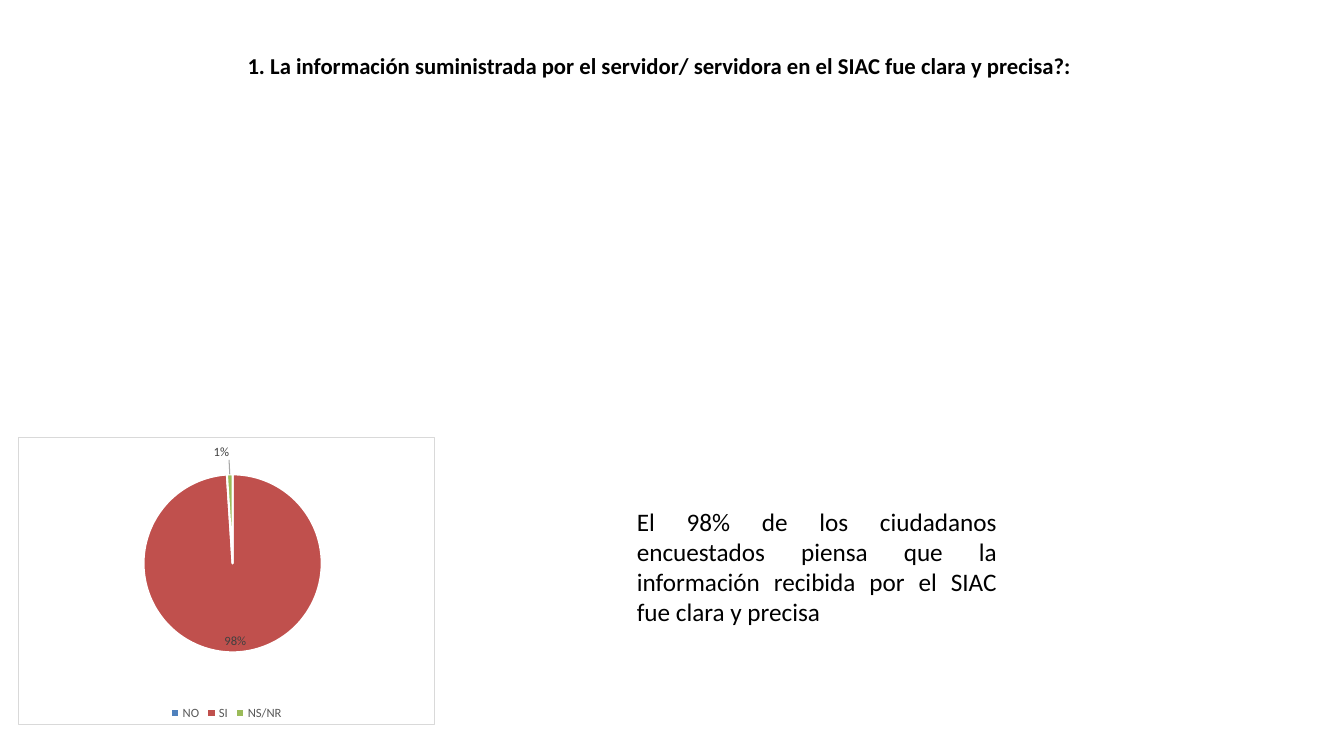
from lxml import etree
from pptx import Presentation
from pptx.chart.data import CategoryChartData
from pptx.dml.color import RGBColor
from pptx.enum import chart as chart_enum, text as text_enum
from pptx.oxml import parse_xml
from pptx.oxml.ns import nsdecls, qn
from pptx.util import Pt

FONT = "Calibri"
COLORS = {
    "text": "000000", "white": "FFFFFF", "border": "D9D9D9",
    "legend": "595959", "label": "404040", "leader": "A6A6A6",
    "NO": "4F81BD", "SI": "C0504D", "NS/NR": "9BBB59",
}
ANSWERS = {"NO": 0, "SI": 98, "NS/NR": 1}
LABEL_OFFSETS = {0: (0.01, -0.03), 2: (-0.02, -0.03)}
PLOT_AREA = {"x": 0.16, "y": 0.13, "w": 0.71, "h": 0.62}


def rgb(name):
    return RGBColor.from_string(COLORS[name])


def format_font(font, size, color, bold=False):
    font.name = FONT
    font.size = Pt(size)
    font.bold = bold
    font.color.rgb = rgb(color)


def add_text(slide, box, content, size, color="text", bold=False,
             align=text_enum.PP_ALIGN.LEFT, anchor=text_enum.MSO_ANCHOR.TOP):
    frame = slide.shapes.add_textbox(*map(Pt, box)).text_frame
    frame.word_wrap = True
    frame.vertical_anchor = anchor
    paragraph = frame.paragraphs[0]
    paragraph.alignment = align
    run = paragraph.add_run()
    run.text = content
    format_font(run.font, size, color, bold)


def manual_layout(positions, inner=False):
    """Return a chart layout element with the given fractions of the chart."""
    target = '<c:layoutTarget val="inner"/>' if inner else ""
    modes = '<c:xMode val="edge"/><c:yMode val="edge"/>' if inner else ""
    values = "".join(f'<c:{key} val="{value}"/>' for key, value in positions.items())
    return parse_xml(f'<c:layout {nsdecls("c")}><c:manualLayout>{target}{modes}{values}'
                     "</c:manualLayout></c:layout>")


def line_properties(color):
    return (f'<c:spPr {nsdecls("c", "a")}><a:ln w="9525"><a:solidFill>'
            f'<a:srgbClr val="{COLORS[color]}"/></a:solidFill></a:ln></c:spPr>')


def label_settings():
    """Return the elements shared by all labels and by each single label."""
    flags = {"LegendKey": 0, "Val": 1, "CatName": 0, "SerName": 0,
             "Percent": 0, "BubbleSize": 0}
    shows = "".join(f'<c:show{name} val="{value}"/>' for name, value in flags.items())
    return (
        '<c:numFmt formatCode="0&quot;%&quot;" sourceLinked="0"/>'
        '<c:spPr><a:noFill/><a:ln><a:noFill/></a:ln></c:spPr>'
        '<c:txPr><a:bodyPr/><a:p><a:pPr><a:defRPr sz="900" b="0"><a:solidFill>'
        f'<a:srgbClr val="{COLORS["label"]}"/></a:solidFill><a:latin typeface="{FONT}"/>'
        '</a:defRPr></a:pPr><a:endParaRPr lang="es-CO"/></a:p></c:txPr>'
        f'<c:dLblPos val="bestFit"/>{shows}')


def add_slice_labels(series_element):
    labels = parse_xml(
        f'<c:dLbls {nsdecls("c", "a")}>{label_settings()}<c:showLeaderLines val="1"/>'
        f'<c:leaderLines>{line_properties("leader")}</c:leaderLines></c:dLbls>')
    for position, (index, (x, y)) in enumerate(LABEL_OFFSETS.items()):
        label = parse_xml(f'<c:dLbl {nsdecls("c", "a")}><c:idx val="{index}"/>'
                          f'{label_settings()}</c:dLbl>')
        label.insert(1, manual_layout({"x": x, "y": y}))
        labels.insert(position, label)
    series_element.find(qn("c:cat")).addprevious(labels)


def frame_chart(chart_space):
    """Give the chart area a white fill and a thin grey border."""
    properties = parse_xml(line_properties("border"))
    fill = etree.Element(qn("a:solidFill"))
    etree.SubElement(fill, qn("a:srgbClr"), val=COLORS["white"])
    properties.insert(0, fill)
    chart_space.find(qn("c:chart")).addnext(properties)


def add_answer_chart(slide, box):
    data = CategoryChartData()
    data.categories = list(ANSWERS)
    data.add_series("Series 1", list(ANSWERS.values()))
    chart = slide.shapes.add_chart(
        chart_enum.XL_CHART_TYPE.PIE, *map(Pt, box), data).chart
    format_font(chart.font, 10, "text")
    chart.has_title = False
    chart.has_legend = True
    chart.legend.position = chart_enum.XL_LEGEND_POSITION.BOTTOM
    chart.legend.include_in_layout = False
    format_font(chart.legend.font, 9, "legend")

    plot = chart.plots[0]
    plot.vary_by_categories = True
    for index, answer in enumerate(ANSWERS):
        slice_format = plot.series[0].points[index].format
        slice_format.fill.solid()
        slice_format.fill.fore_color.rgb = rgb(answer)
        slice_format.line.color.rgb = rgb("white")
        slice_format.line.width = Pt(1.5)

    plot_area = chart.element.find(".//" + qn("c:plotArea"))
    for layout in plot_area.findall(qn("c:layout")):
        plot_area.remove(layout)
    plot_area.insert(0, manual_layout(PLOT_AREA, inner=True))
    add_slice_labels(plot_area.find(".//" + qn("c:ser")))
    frame_chart(chart.element)


def build_question_slide(presentation):
    slide = presentation.slides.add_slide(presentation.slide_layouts[6])
    add_text(slide, (124.5, 13.7, 692.6, 46),
             "1. La información suministrada por el servidor/ servidora "
             "en el SIAC fue clara y precisa?:",
             size=16.2, bold=True, align=text_enum.PP_ALIGN.CENTER,
             anchor=text_enum.MSO_ANCHOR.BOTTOM)
    add_answer_chart(slide, (13, 311.8, 297.4, 205.9))
    add_text(slide, (447.8, 357.8, 271.4, 116.6),
             "El 98% de los ciudadanos encuestados piensa que la información "
             "recibida por el SIAC fue clara y precisa",
             size=18, align=text_enum.PP_ALIGN.JUSTIFY)


def main():
    presentation = Presentation()
    presentation.slide_width = Pt(960)
    presentation.slide_height = Pt(540)
    build_question_slide(presentation)
    presentation.save("out.pptx")


if __name__ == "__main__":
    main()
